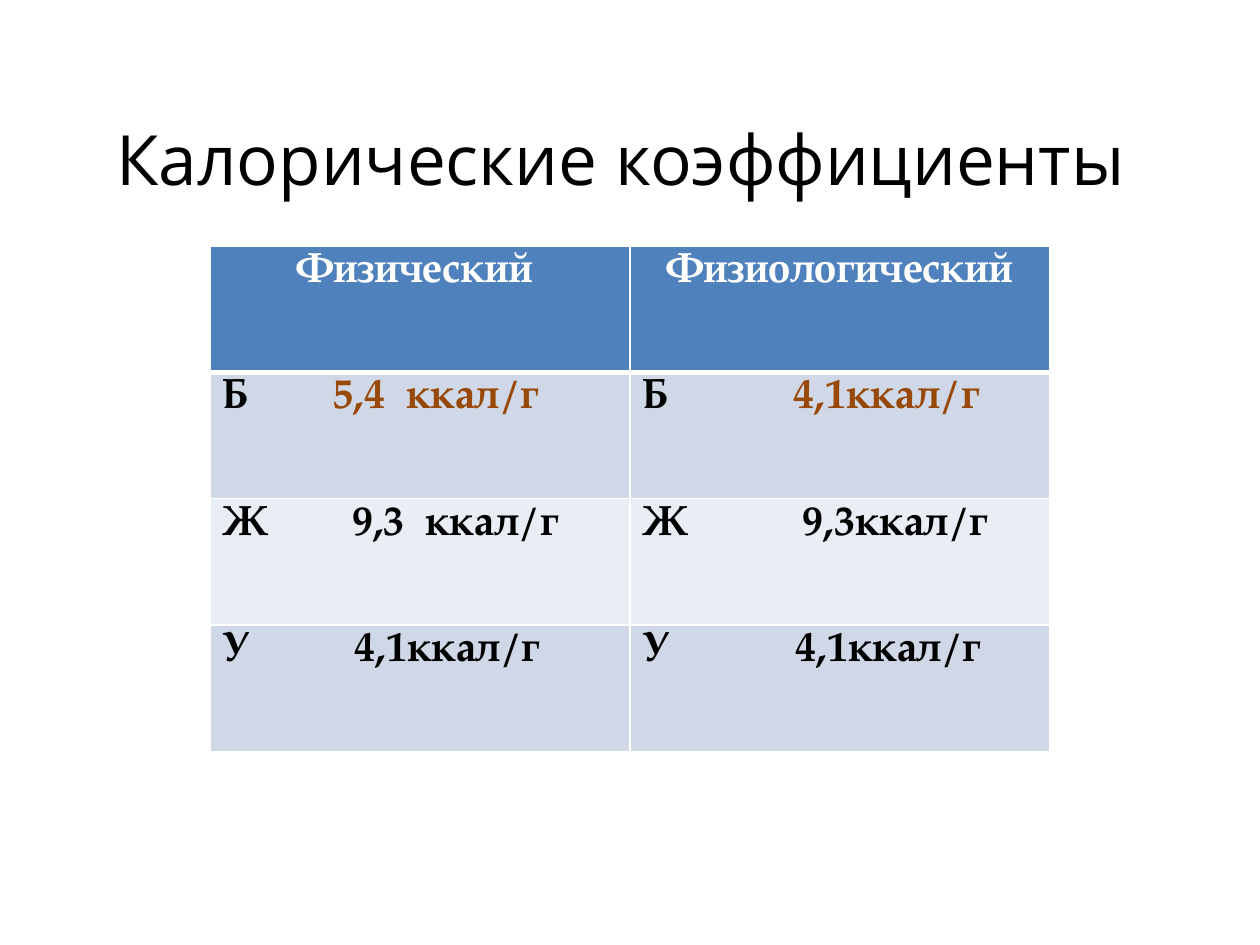
"""Build a slide with a table of physical and physiological caloric coefficients."""
import dataclasses

import pptx
import pptx.dml.color
import pptx.enum.text
import pptx.oxml
import pptx.oxml.ns
import pptx.util

Pt = pptx.util.Pt
ALIGN = pptx.enum.text.PP_ALIGN
COLORS = {
    "black": "000000",
    "white": "FFFFFF",
    "accent": "984807",
    "header": "4F81BD",
    "odd": "D0D8E8",
    "even": "E9EDF4",
}
TITLE_FONT = "Open Sans"
TABLE_FONT = "TeX Gyre Pagella"
COL_WIDTH = 240
ROW_HEIGHT = 72.2


@dataclasses.dataclass
class Coefficient:
    nutrient: str
    value: str
    tab: float
    color: str = "black"


HEADERS = ["Физический ", "Физиологический"]
ROWS = [
    [Coefficient("Б", "5,4  ккал/г", 63, "accent"), Coefficient("Б", "4,1ккал/г", 86.5, "accent")],
    [Coefficient("Ж", "9,3  ккал/г", 74), Coefficient("Ж", "9,3ккал/г", 91.5)],
    [Coefficient("У", "4,1ккал/г", 75.5), Coefficient("У", "4,1ккал/г", 87.5)],
]


def rgb(name: str) -> pptx.dml.color.RGBColor:
    return pptx.dml.color.RGBColor.from_string(COLORS[name])


def style_run(r, font: str, size: float, color: str, bold: bool = False) -> None:
    r.font.name = font
    r.font.size = Pt(size)
    r.font.bold = bold
    r.font.color.rgb = rgb(color)


def style_cell(cell, fill: str, top: float = 1, bottom: float = 1) -> None:
    tc_pr = cell._tc.get_or_add_tcPr()
    for side, width in {"L": 1, "R": 1, "T": top, "B": bottom}.items():
        tc_pr.append(pptx.oxml.parse_xml(
            f'<a:ln{side} {pptx.oxml.ns.nsdecls("a")} w="{Pt(width)}"><a:solidFill>'
            f'<a:srgbClr val="{COLORS["white"]}"/></a:solidFill></a:ln{side}>'))
    cell.fill.solid()
    cell.fill.fore_color.rgb = rgb(fill)


def fill_header(cell, text: str) -> None:
    style_cell(cell, "header", bottom=3)
    p = cell.text_frame.paragraphs[0]
    p.text = text
    p.alignment = ALIGN.CENTER
    style_run(p.runs[0], TABLE_FONT, 24, "white", True)


def fill_coefficient(cell, item: Coefficient, row: int) -> None:
    style_cell(cell, "odd" if row % 2 else "even", top=3 if row == 1 else 1)
    p = cell.text_frame.paragraphs[0]
    p.text = f"{item.nutrient}\t"
    p.add_run().text = item.value
    for r, color in zip(p.runs, ("black", item.color)):
        style_run(r, TABLE_FONT, 24, color, True)
    p._p.get_or_add_pPr().append(pptx.oxml.parse_xml(
        f'<a:tabLst {pptx.oxml.ns.nsdecls("a")}><a:tab pos="{Pt(item.tab)}" algn="l"/></a:tabLst>'))


def add_title(slide, text: str) -> None:
    sp = slide.shapes.title
    sp.left, sp.top, sp.width, sp.height = Pt(54), Pt(56), Pt(612), Pt(68)
    tf = sp.text_frame
    tf.text = text
    tf.vertical_anchor = pptx.enum.text.MSO_ANCHOR.MIDDLE
    p = tf.paragraphs[0]
    p.alignment = ALIGN.CENTER
    style_run(p.runs[0], TITLE_FONT, 39.6, "black")


def add_coefficients(slide) -> None:
    n_rows, n_cols = len(ROWS) + 1, len(HEADERS)
    table = slide.shapes.add_table(
        n_rows, n_cols, Pt(120), Pt(140.5), Pt(COL_WIDTH * n_cols), Pt(ROW_HEIGHT * n_rows)).table
    for col, text in enumerate(HEADERS):
        fill_header(table.cell(0, col), text)
    for row, items in enumerate(ROWS, start=1):
        for col, item in enumerate(items):
            fill_coefficient(table.cell(row, col), item, row)


def main() -> None:
    prs = pptx.Presentation()
    prs.slide_width, prs.slide_height = Pt(720), Pt(540)
    s = prs.slides.add_slide(prs.slide_layouts[0])
    subtitle = s.placeholders[1].element
    subtitle.getparent().remove(subtitle)
    add_title(s, "Калорические коэффициенты ")
    add_coefficients(s)
    prs.save("out.pptx")


if __name__ == "__main__":
    main()
